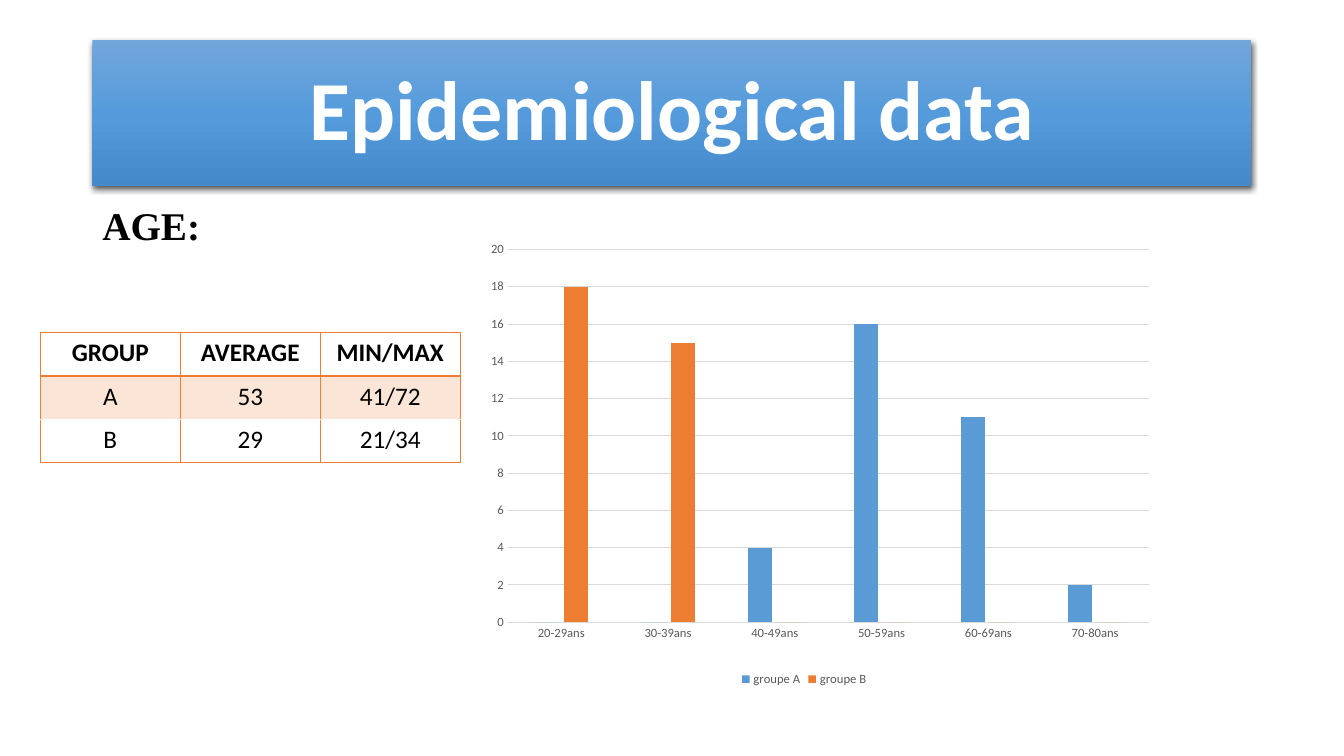
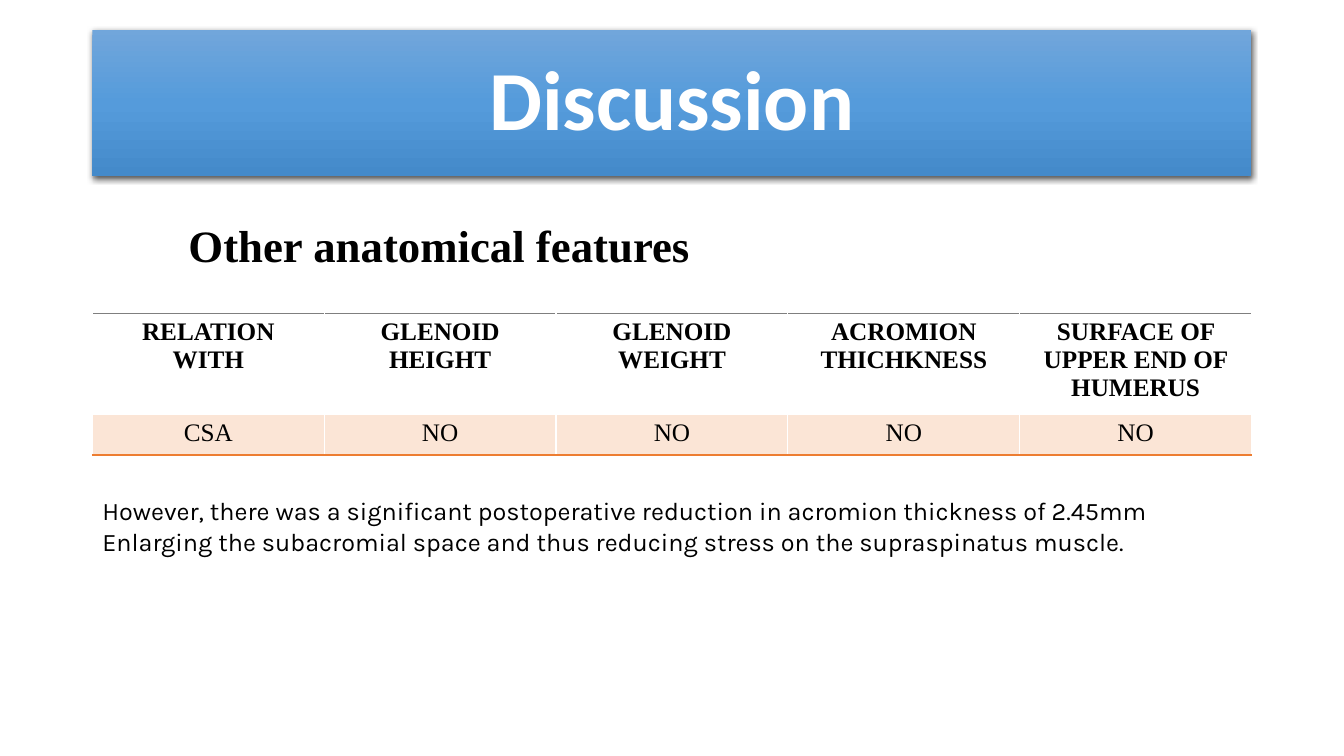
"""Build two slides of clinical results: age data and anatomical features."""
import dataclasses

import lxml.etree
import pptx
import pptx.chart.data
import pptx.dml.color
import pptx.enum.chart
import pptx.enum.shapes
import pptx.enum.text
import pptx.oxml
import pptx.oxml.ns
import pptx.util

Pt = pptx.util.Pt
RGB = pptx.dml.color.RGBColor.from_string
qn = pptx.oxml.ns.qn
PP_ALIGN = pptx.enum.text.PP_ALIGN
MSO_ANCHOR = pptx.enum.text.MSO_ANCHOR


@dataclasses.dataclass(frozen=True)
class Theme:
    sans: str = "Calibri"
    serif: str = "Times New Roman"
    note: str = "Karla"
    black: str = "000000"
    white: str = "FFFFFF"
    blue: str = "5B9BD5"
    orange: str = "ED7D31"
    tint: str = "FBE5D6"
    rule: str = "7F7F7F"
    grid: str = "D9D9D9"
    label: str = "595959"
    banner: tuple = ((0, "71A6DB"), (50, "559BDB"), (100, "448ACA"))
    title_size: int = 60
    heading_size: int = 32
    lead_size: int = 28
    body_size: int = 18
    chart_size: int = 9


T = Theme()


def write(tf, text, font, size, color=T.black, bold=False, align=PP_ALIGN.LEFT):
    """Fill a text frame and format every run alike."""
    tf.word_wrap = True
    tf.text = text
    for p in tf.paragraphs:
        p.alignment = align
        for r in p.runs:
            r.font.name = font
            r.font.size = Pt(size)
            r.font.bold = bold
            r.font.color.rgb = RGB(color)


def set_borders(cell, borders):
    """Add cell edges given as {side: (colour, width)}."""
    tcPr = cell._tc.get_or_add_tcPr()
    for side in "LRTB":
        if side in borders:
            color, width = borders[side]
            ln = lxml.etree.SubElement(tcPr, qn(f"a:ln{side}"), w=str(Pt(width)))
            fill = lxml.etree.SubElement(ln, qn("a:solidFill"))
            lxml.etree.SubElement(fill, qn("a:srgbClr"), val=color)


prs = pptx.Presentation()
prs.slide_width, prs.slide_height = Pt(960), Pt(540)

thin, thick, hair = (T.orange, 1), (T.orange, 2), (T.rule, 0.5)
pages = [
    dict(
        title="Epidemiological data", top=28.8,
        left=28.8, table_top=237.6, col_width=100, row_heights=[31, 31, 31],
        font=T.sans,
        head_borders=dict(L=thin, R=thin, T=thin, B=thick),
        body_borders=dict(L=thin, R=thin, B=thin),
        rows=[
            ["GROUP", "AVERAGE", "MIN/MAX"],
            ["A", "53", "41/72"],
            ["B", "29", "21/34"],
        ],
    ),
    dict(
        title="Discussion", top=21.6,
        left=66, table_top=223.7, col_width=165.6, row_heights=[67, 29.2],
        font=T.serif,
        head_borders=dict(T=hair, B=hair),
        body_borders=dict(B=thin),
        rows=[
            ["RELATION\nWITH", "GLENOID HEIGHT", "GLENOID WEIGHT",
             "ACROMION THICHKNESS", "SURFACE OF UPPER END OF HUMERUS"],
            ["CSA", "NO", "NO", "NO", "NO"],
        ],
    ),
]

for page in pages:
    s = prs.slides.add_slide(prs.slide_layouts[6])

    sp = s.shapes.add_shape(pptx.enum.shapes.MSO_SHAPE.RECTANGLE,
                            Pt(66), Pt(page["top"]), Pt(828), Pt(104.4))
    sp.line.fill.background()
    sp.shadow.inherit = False
    spPr = sp.element.spPr
    grad = lxml.etree.Element(qn("a:gradFill"), rotWithShape="1")
    stops = lxml.etree.SubElement(grad, qn("a:gsLst"))
    for pos, color in T.banner:
        gs = lxml.etree.SubElement(stops, qn("a:gs"), pos=str(pos * 1000))
        lxml.etree.SubElement(gs, qn("a:srgbClr"), val=color)
    lxml.etree.SubElement(grad, qn("a:lin"), ang="5400000", scaled="0")
    spPr.find(qn("a:prstGeom")).addnext(grad)
    shadow = lxml.etree.SubElement(
        spPr.find(qn("a:effectLst")), qn("a:outerShdw"), blurRad=str(Pt(4.5)),
        dist=str(Pt(1.5)), dir="5400000", algn="ctr", rotWithShape="0")
    shade = lxml.etree.SubElement(shadow, qn("a:srgbClr"), val=T.black)
    lxml.etree.SubElement(shade, qn("a:alpha"), val="63000")
    tf = sp.text_frame
    write(tf, page["title"], T.sans, T.title_size, T.white, True, PP_ALIGN.CENTER)
    tf.vertical_anchor = MSO_ANCHOR.MIDDLE
    tf.paragraphs[0].line_spacing = 0.9

    rows, heights = page["rows"], page["row_heights"]
    cols = len(rows[0])
    table = s.shapes.add_table(
        len(rows), cols, Pt(page["left"]), Pt(page["table_top"]),
        Pt(page["col_width"] * cols), Pt(sum(heights))).table
    table.first_row = table.horz_banding = False
    for col in table.columns:
        col.width = Pt(page["col_width"])
    for i, (row, height) in enumerate(zip(rows, heights)):
        table.rows[i].height = Pt(height)
        for j, text in enumerate(row):
            cell = table.cell(i, j)
            write(cell.text_frame, text, page["font"], T.body_size,
                  bold=i == 0, align=PP_ALIGN.CENTER)
            set_borders(cell, page["body_borders"] if i else page["head_borders"])
            if i % 2:
                cell.fill.solid()
                cell.fill.fore_color.rgb = RGB(T.tint)
            else:
                cell.fill.background()

age, discussion = prs.slides

tf = age.shapes.add_textbox(Pt(66), Pt(144), Pt(828), Pt(40)).text_frame
write(tf, "AGE:", T.serif, T.lead_size, bold=True)
tf.paragraphs[0].line_spacing = 0.9

data = pptx.chart.data.CategoryChartData()
data.categories = ["20-29ans", "30-39ans", "40-49ans",
                   "50-59ans", "60-69ans", "70-80ans"]
data.add_series("groupe A", [0, 0, 4, 16, 11, 2])
data.add_series("groupe B", [18, 15, 0, 0, 0, 0])
chart = age.shapes.add_chart(
    pptx.enum.chart.XL_CHART_TYPE.COLUMN_CLUSTERED,
    Pt(328.3), Pt(168.5), Pt(492.5), Pt(324.7), data).chart
chart.has_title = False
chart.font.name = T.sans
chart.font.size = Pt(T.chart_size)
chart.font.color.rgb = RGB(T.label)
chart.has_legend = True
chart.legend.position = pptx.enum.chart.XL_LEGEND_POSITION.BOTTOM
chart.legend.include_in_layout = False

plot = chart.plots[0]
plot.vary_by_categories = False
plot.gap_width, plot.overlap = 219, -27
for series, color in zip(plot.series, (T.blue, T.orange)):
    series.format.fill.solid()
    series.format.fill.fore_color.rgb = RGB(color)

cat_axis, val_axis = chart.category_axis, chart.value_axis
for axis in (cat_axis, val_axis):
    axis.major_tick_mark = axis.minor_tick_mark = pptx.enum.chart.XL_TICK_MARK.NONE
val_axis.minimum_scale, val_axis.maximum_scale, val_axis.major_unit = 0, 20, 2
val_axis.has_major_gridlines = True
val_axis.format.line.fill.background()
for line in (cat_axis.format.line, val_axis.major_gridlines.format.line):
    line.color.rgb = RGB(T.grid)
    line.width = Pt(0.75)

area = chart.element.find(".//" + qn("c:plotArea"))
for old in area.findall(qn("c:layout")):
    area.remove(old)
layout = lxml.etree.Element(qn("c:layout"))
manual = lxml.etree.SubElement(layout, qn("c:manualLayout"))
for tag, val in [("layoutTarget", "inner"), ("xMode", "edge"), ("yMode", "edge"),
                 ("x", "0.07"), ("y", "0.03"), ("w", "0.93"), ("h", "0.82")]:
    lxml.etree.SubElement(manual, qn(f"c:{tag}"), val=val)
area.insert(0, layout)

tf = discussion.shapes.add_textbox(Pt(55.4), Pt(152), Pt(813), Pt(46)).text_frame
tf.margin_left = Pt(79.2)
write(tf, "Other anatomical features", T.serif, T.heading_size, bold=True)

tf = discussion.shapes.add_textbox(Pt(66), Pt(350.6), Pt(779), Pt(51)).text_frame
write(tf, "However, there was a significant postoperative reduction in acromion "
      "thickness of 2.45mm Enlarging the subacromial space and thus reducing "
      "stress on the supraspinatus muscle.", T.note, T.body_size)

prs.save("out.pptx")
